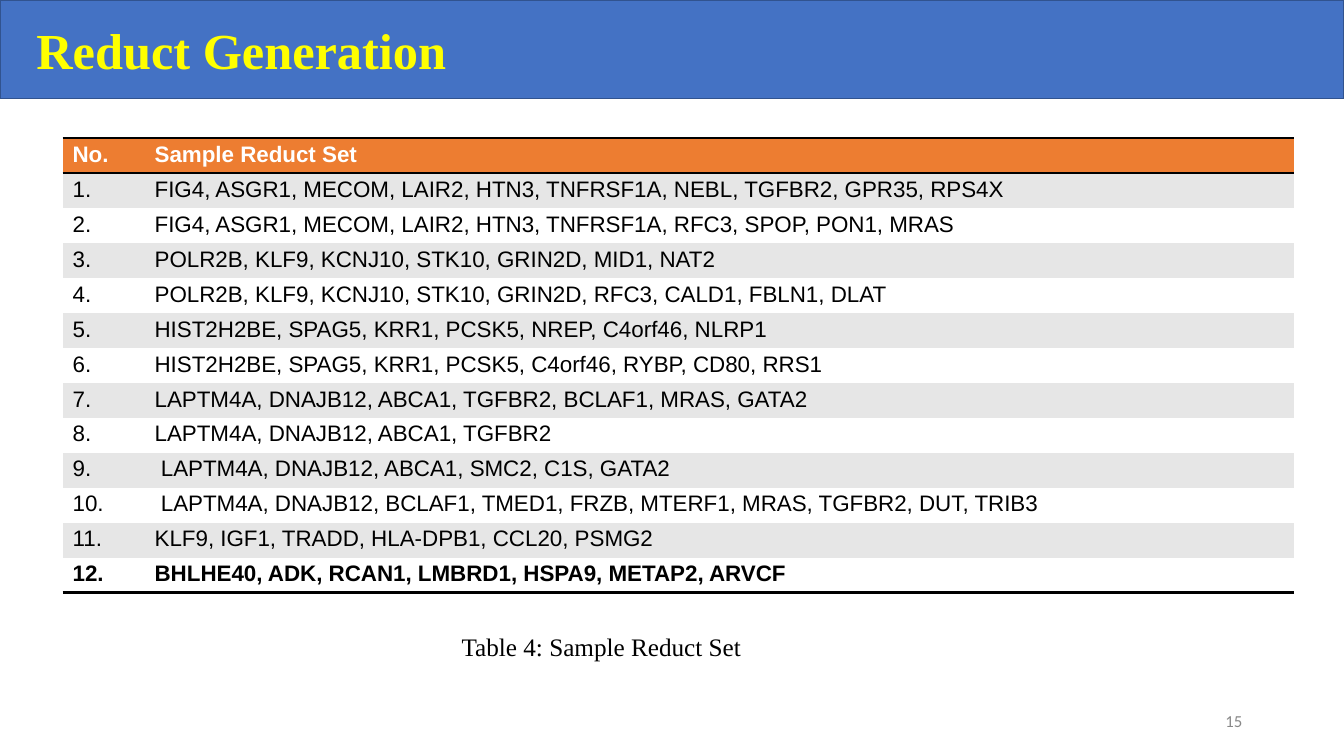
from lxml import etree
from pptx import Presentation
from pptx import util as u
from pptx.dml import color
from pptx.enum import text
from pptx.oxml import ns

WIDTH, HEIGHT = 13.33, 7.5
NO_STYLE = "{2D5ABB26-0587-4C30-8999-92F81FD0307C}"
REDUCTS = [
    "FIG4, ASGR1, MECOM, LAIR2, HTN3, TNFRSF1A, NEBL, TGFBR2, GPR35, RPS4X",
    "FIG4, ASGR1, MECOM, LAIR2, HTN3, TNFRSF1A, RFC3, SPOP, PON1, MRAS",
    "POLR2B, KLF9, KCNJ10, STK10, GRIN2D, MID1, NAT2",
    "POLR2B, KLF9, KCNJ10, STK10, GRIN2D, RFC3, CALD1, FBLN1, DLAT",
    "HIST2H2BE, SPAG5, KRR1, PCSK5, NREP, C4orf46, NLRP1",
    "HIST2H2BE, SPAG5, KRR1, PCSK5, C4orf46, RYBP, CD80, RRS1",
    "LAPTM4A, DNAJB12, ABCA1, TGFBR2, BCLAF1, MRAS, GATA2",
    "LAPTM4A, DNAJB12, ABCA1, TGFBR2",
    " LAPTM4A, DNAJB12, ABCA1, SMC2, C1S, GATA2",
    " LAPTM4A, DNAJB12, BCLAF1, TMED1, FRZB, MTERF1, MRAS, TGFBR2, DUT, TRIB3",
    "KLF9, IGF1, TRADD, HLA-DPB1, CCL20, PSMG2",
    "BHLHE40, ADK, RCAN1, LMBRD1, HSPA9, METAP2, ARVCF",
]


def rgb(value):
    return color.RGBColor.from_string(value)


def inches(box):
    return [u.Inches(length) for length in box]


def write(frame, words, size, font, ink, bold=False, align=text.PP_ALIGN.LEFT):
    frame.text = words
    paragraph = frame.paragraphs[0]
    paragraph.alignment = align
    for run in paragraph.runs:
        run.font.size = u.Pt(size)
        run.font.name = font
        run.font.bold = bold
        run.font.color.rgb = rgb(ink)


def add_title_band(slide, box):
    title = slide.shapes.title
    title.left, title.top, title.width, title.height = inches(box)
    title.fill.solid()
    title.fill.fore_color.rgb = rgb("4472C4")
    title.line.color.rgb = rgb("31538F")
    title.line.width = u.Pt(1)
    frame = title.text_frame
    frame.auto_size = text.MSO_AUTO_SIZE.NONE
    frame.vertical_anchor = text.MSO_ANCHOR.MIDDLE
    frame.margin_left = u.Inches(0.36)
    write(frame, "Reduct Generation", 36, "Times New Roman", "FFFF00", True)


def add_rule(cell, side):
    """Draw a black 2 pt border on one side of a cell: "T" or "B"."""
    properties = cell._tc.get_or_add_tcPr()
    line = etree.SubElement(properties, ns.qn(f"a:ln{side}"), w=str(u.Pt(2)))
    fill = etree.SubElement(line, ns.qn("a:solidFill"))
    etree.SubElement(fill, ns.qn("a:srgbClr"), val="000000")


def add_reduct_table(slide, box):
    rows = [("No.", "Sample Reduct Set")]
    rows += [(f"{number}.", genes) for number, genes in enumerate(REDUCTS, 1)]
    last = len(rows) - 1
    table = slide.shapes.add_table(len(rows), 2, *inches(box)).table
    table._tbl.tblPr.find(ns.qn("a:tableStyleId")).text = NO_STYLE
    number_width = box[2] / 15
    table.columns[0].width = u.Inches(number_width)
    table.columns[1].width = u.Inches(box[2] - number_width)
    for index, row in enumerate(rows):
        header = index == 0
        band = "ED7D31" if header else "E6E6E6" if index % 2 else "FFFFFF"
        sides = "TB" if header else "B" if index == last else ""
        for column, words in enumerate(row):
            cell = table.cell(index, column)
            for side in sides:
                add_rule(cell, side)
            cell.fill.solid()
            cell.fill.fore_color.rgb = rgb(band)
            cell.margin_top = cell.margin_bottom = u.Inches(0.04)
            write(cell.text_frame, words, 16, "Arial",
                  "FFFFFF" if header else "000000",
                  index in (0, last), text.PP_ALIGN.JUSTIFY)


def add_label(slide, box, words, size, font, ink, align=text.PP_ALIGN.LEFT):
    frame = slide.shapes.add_textbox(*inches(box)).text_frame
    frame.word_wrap = True
    frame.vertical_anchor = text.MSO_ANCHOR.MIDDLE
    write(frame, words, size, font, ink, align=align)


def main():
    presentation = Presentation()
    presentation.slide_width = u.Inches(WIDTH)
    presentation.slide_height = u.Inches(HEIGHT)
    slide = presentation.slides.add_slide(presentation.slide_layouts[5])
    add_title_band(slide, (0, 0, WIDTH, 0.13 * HEIGHT))
    add_reduct_table(slide, (0.62, 1.37, 12.21, 4.51))
    add_label(slide, (4.48, 6.21, 4.43, 0.4), "Table 4: Sample Reduct Set",
              18, "Times New Roman", "000000")
    add_label(slide, (9.42, 6.95, 3, 0.4), "15", 12, "Calibri", "888888",
              text.PP_ALIGN.RIGHT)
    presentation.save("out.pptx")


if __name__ == "__main__":
    main()
